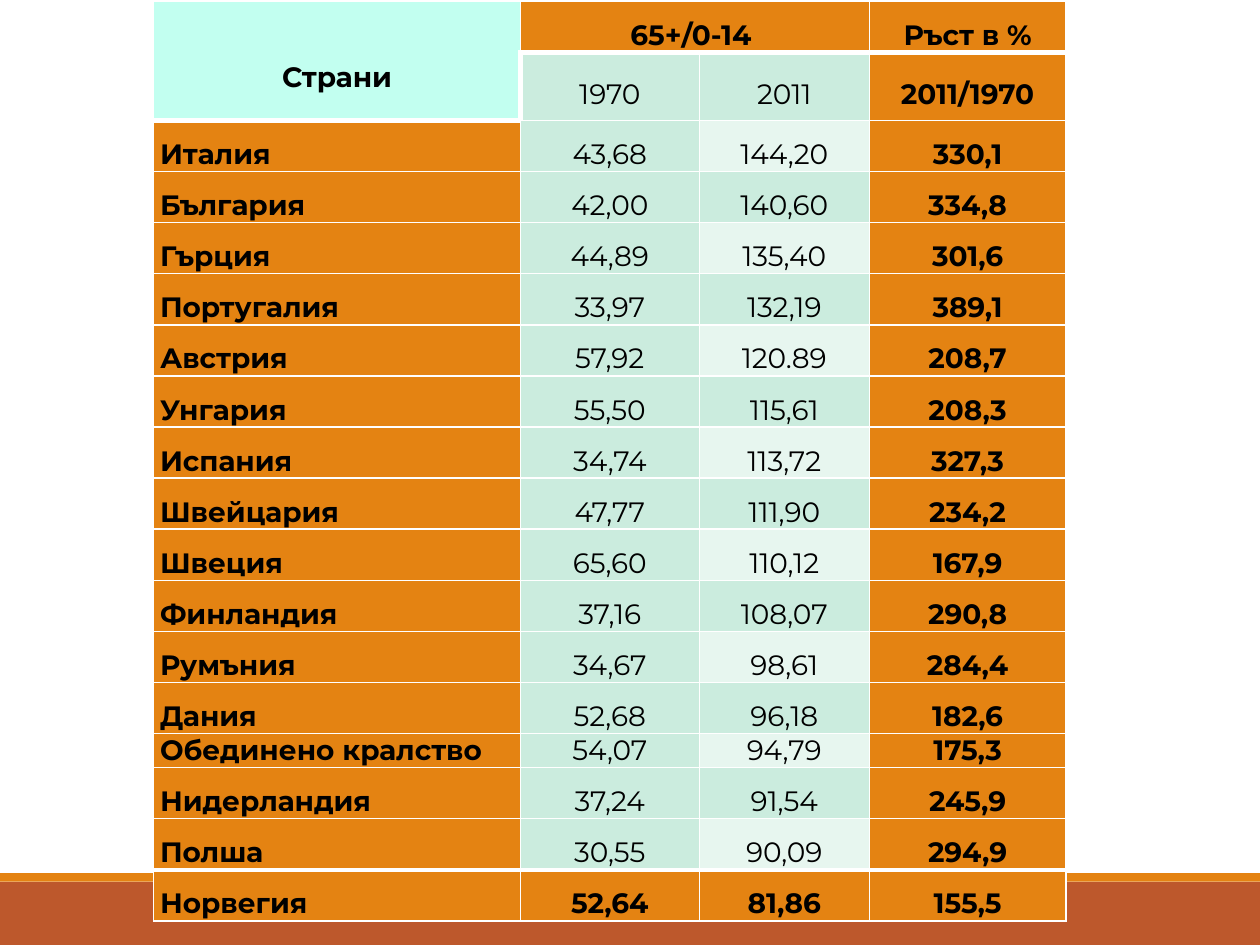
import pptx
import pptx.dml.color
import pptx.enum.shapes
import pptx.enum.text
import pptx.oxml.ns
import pptx.util
import lxml.etree

COLORS = {
    "white": "FFFFFF",
    "black": "000000",
    "orange": "E48312",
    "rust": "BD582C",
    "aqua": "C2FFF0",
    "mint": "CBECDE",
    "pale_mint": "E7F6EF",
}
FONT = "Montserrat"
THIN, THICK = 1, 3

COLUMN_WIDTHS = [2.91, 1.42, 1.35, 1.56]
ROW_HEIGHT = 0.4
COMPACT_ROW_HEIGHT = 0.27
COMPACT_COUNTRY = "Обединено кралство"

ROWS = [
    ["Страни", "65+/0-14 ", "", "Ръст в %"],
    ["", "1970", "2011", "2011/1970"],
    ["Италия", "43,68", "144,20", "330,1"],
    ["България", "42,00", "140,60", "334,8"],
    ["Гърция", "44,89", "135,40", "301,6"],
    ["Португалия", "33,97", "132,19", "389,1"],
    ["Австрия", "57,92", "120.89", "208,7"],
    ["Унгария", "55,50", "115,61", "208,3"],
    ["Испания", "34,74", "113,72", "327,3"],
    ["Швейцария", "47,77", "111,90", "234,2"],
    ["Швеция", "65,60", "110,12", "167,9"],
    ["Финландия", "37,16", "108,07", "290,8"],
    ["Румъния", "34,67", "98,61", "284,4"],
    ["Дания", "52,68", "96,18", "182,6"],
    [COMPACT_COUNTRY, "54,07", "94,79", "175,3"],
    ["Нидерландия", "37,24", "91,54", "245,9"],
    ["Полша", "30,55", "90,09", "294,9"],
    ["Норвегия", "52,64", "81,86", "155,5"],
]
LAST = len(ROWS) - 1


def rgb(name):
    return pptx.dml.color.RGBColor.from_string(COLORS[name])


def add_band(slide, left, top, width, height, color):
    band = slide.shapes.add_shape(
        pptx.enum.shapes.MSO_SHAPE.RECTANGLE, left, top, width, height)
    band.shadow.inherit = False
    band.fill.solid()
    band.fill.fore_color.rgb = rgb(color)
    band.line.fill.background()


def add_footer(slide, left, top, width, height):
    """Thin stripe above a solid band."""
    stripe_height = int(height * 0.12)
    add_band(slide, left, top + stripe_height, width, height - stripe_height, "rust")
    add_band(slide, left, top, width, stripe_height, "orange")


def cell_color(row, column):
    if (row, column) == (0, 0):
        return "aqua"
    if row in (0, LAST) or column in (0, 3):
        return "orange"
    if column == 2 and row > 1 and row % 2 == 0:
        return "pale_mint"
    return "mint"


def border_widths(row, column):
    heading = column == 0 and row < 2
    thick_top = row == LAST or (row == 2 and column == 0) or (row == 1 and column > 0)
    thick_bottom = row in (0, LAST - 1) or heading
    return {
        "L": THICK if (row, column) == (1, 1) else THIN,
        "R": THIN,
        "T": THICK if thick_top else THIN,
        "B": THICK if thick_bottom else THIN,
    }


def set_borders(cell, widths):
    properties = cell._tc.get_or_add_tcPr()
    name = pptx.oxml.ns.qn
    for side, width in widths.items():
        line = lxml.etree.SubElement(
            properties, name("a:ln" + side), w=str(pptx.util.Pt(width)))
        fill = lxml.etree.SubElement(line, name("a:solidFill"))
        lxml.etree.SubElement(fill, name("a:srgbClr"), val=COLORS["white"])


def line_spacing(row, column):
    if (row, column) == (0, 0):
        return 2.0
    return 1.0 if ROWS[row][0] == COMPACT_COUNTRY else 1.5


def format_cell(cell, row, column):
    # Borders, fill and margins
    set_borders(cell, border_widths(row, column))
    cell.fill.solid()
    cell.fill.fore_color.rgb = rgb(cell_color(row, column))
    cell.margin_left = cell.margin_right = pptx.util.Inches(0.05)
    cell.margin_top = cell.margin_bottom = 0
    anchors = pptx.enum.text.MSO_ANCHOR
    cell.vertical_anchor = anchors.TOP if (row, column) == (0, 3) else anchors.MIDDLE

    # Text
    cell.text_frame.text = ROWS[row][column]
    paragraph = cell.text_frame.paragraphs[0]
    paragraph.line_spacing = line_spacing(row, column)
    alignments = pptx.enum.text.PP_ALIGN
    left_aligned = column == 0 and row > 1
    paragraph.alignment = alignments.LEFT if left_aligned else alignments.CENTER
    paragraph.font.size = pptx.util.Pt(16)
    for run in paragraph.runs:
        run.font.name = FONT
        run.font.size = pptx.util.Pt(16)
        run.font.bold = column in (0, 3) or row in (0, LAST)
        run.font.color.rgb = rgb("black")


def add_ratio_table(slide, left, top, width, height):
    table = slide.shapes.add_table(
        len(ROWS), len(COLUMN_WIDTHS), left, top, width, height).table
    for column, share in zip(table.columns, COLUMN_WIDTHS):
        column.width = int(width * share / sum(COLUMN_WIDTHS))
    for row, values in zip(table.rows, ROWS):
        compact = values[0] == COMPACT_COUNTRY
        row.height = pptx.util.Inches(COMPACT_ROW_HEIGHT if compact else ROW_HEIGHT)

    # Heading spans
    table.cell(0, 0).merge(table.cell(1, 0))
    table.cell(0, 1).merge(table.cell(0, 2))

    for row in range(len(ROWS)):
        for column in range(len(COLUMN_WIDTHS)):
            format_cell(table.cell(row, column), row, column)


def main():
    presentation = pptx.Presentation()
    presentation.slide_width = pptx.util.Inches(10)
    presentation.slide_height = pptx.util.Inches(7.5)
    slide = presentation.slides.add_slide(presentation.slide_layouts[6])
    width, height = presentation.slide_width, presentation.slide_height

    footer_height = int(height * 0.076)
    add_footer(slide, 0, height - footer_height, width, footer_height)
    table_height = ROW_HEIGHT * LAST + COMPACT_ROW_HEIGHT
    add_ratio_table(
        slide, int(width * 0.122), pptx.util.Inches(0.01),
        pptx.util.Inches(sum(COLUMN_WIDTHS)), pptx.util.Inches(table_height))
    presentation.save("out.pptx")


if __name__ == "__main__":
    main()
